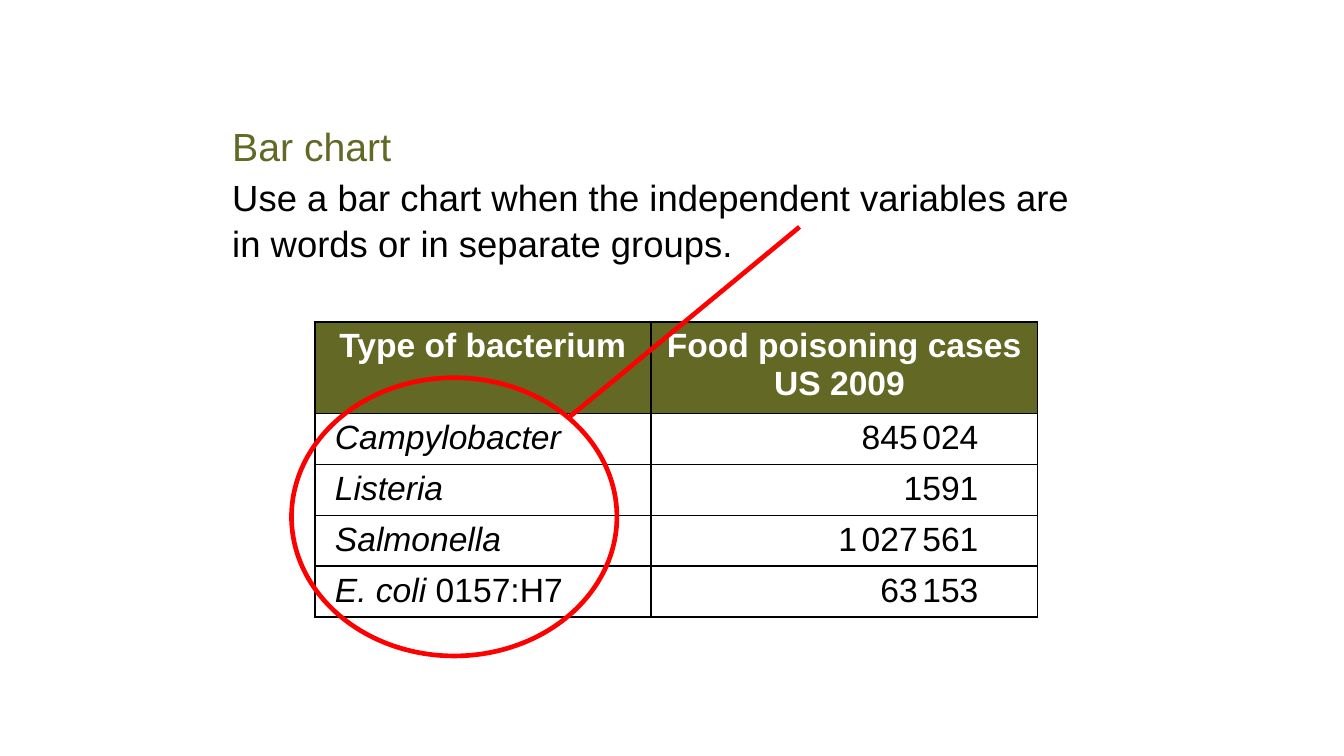
from lxml.etree import SubElement
from pptx import Presentation
from pptx.dml.color import RGBColor
from pptx.enum.shapes import MSO_CONNECTOR, MSO_SHAPE
from pptx.enum.text import PP_ALIGN
from pptx.oxml.ns import qn
from pptx.util import Cm, Pt

OLIVE = RGBColor(0x63, 0x68, 0x25)
BLACK = RGBColor(0x00, 0x00, 0x00)
WHITE = RGBColor(0xFF, 0xFF, 0xFF)
RED = RGBColor(0xFF, 0x00, 0x00)

FONT = "Arial"
TABLE_SIZE = 18
GAP_SIZE = 9  # small space between groups of digits

HEADERS = ["Type of bacterium", "Food poisoning cases\nUS 2009 "]
# Each row: italic name, upright suffix, number of cases
BACTERIA = [
    ("Campylobacter", "", "845 024"),
    ("Listeria", "", "1591"),
    ("Salmonella", "", "1\u00a0027\u00a0561".replace("\u00a0", " ")),
    ("E. coli", " 0157:H7", "63 153"),
]


def add_text(paragraph, text, size=TABLE_SIZE, color=BLACK, bold=False, italic=False):
    """Append text to a paragraph; a newline becomes a line break."""
    for index, line in enumerate(text.split("\n")):
        if index:
            paragraph.add_line_break()
        run = paragraph.add_run()
        run.text = line
        run.font.name = FONT
        run.font.size = Pt(size)
        run.font.color.rgb = color
        run.font.bold = bold
        run.font.italic = italic


def add_number(paragraph, number):
    """Write a number with narrow gaps between its groups of digits."""
    for index, digits in enumerate(number.split()):
        if index:
            add_text(paragraph, "\u00a0", size=GAP_SIZE)
        add_text(paragraph, digits)


def add_explanation(slide):
    box = slide.shapes.add_textbox(Cm(4.14), Cm(2.18), Cm(17.09), Cm(2.84))
    frame = box.text_frame
    frame.word_wrap = True
    heading = frame.paragraphs[0]
    add_text(heading, "Bar chart", size=21, color=OLIVE)
    body = frame.add_paragraph()
    add_text(body, "Use a bar chart when the independent variables are\n"
                   "in words or in separate groups.", size=19.5)
    body.line_spacing = 1.05
    for paragraph in (heading, body):
        paragraph.space_before = Pt(2)


def set_borders(cell):
    properties = cell._tc.get_or_add_tcPr()
    for position, side in enumerate(("a:lnL", "a:lnR", "a:lnT", "a:lnB")):
        line = properties.makeelement(qn(side), {"w": str(Pt(1))})
        fill = SubElement(line, qn("a:solidFill"))
        SubElement(fill, qn("a:srgbClr"), val=str(BLACK))
        properties.insert(position, line)


def format_cell(cell, fill, left=0.18, right=0.18, align=PP_ALIGN.LEFT):
    """Style a cell and return its paragraph."""
    cell.fill.solid()
    cell.fill.fore_color.rgb = fill
    cell.margin_left, cell.margin_right = Cm(left), Cm(right)
    cell.margin_top = cell.margin_bottom = Cm(0.1)
    set_borders(cell)
    paragraph = cell.text_frame.paragraphs[0]
    paragraph.alignment = align
    return paragraph


def add_bacteria_table(slide):
    frame = slide.shapes.add_table(len(BACTERIA) + 1, len(HEADERS),
                                   Cm(5.95), Cm(6.09), Cm(13.66), Cm(5.55))
    table = frame.table
    for column, width in zip(table.columns, (6.35, 7.31)):
        column.width = Cm(width)
    for index, row in enumerate(table.rows):
        row.height = Cm(0.96 if index else 1.71)

    # Header row
    for column, header in enumerate(HEADERS):
        paragraph = format_cell(table.cell(0, column), OLIVE, align=PP_ALIGN.CENTER)
        add_text(paragraph, header, color=WHITE, bold=True)

    # One row per bacterium
    for row, (name, suffix, cases) in enumerate(BACTERIA, start=1):
        paragraph = format_cell(table.cell(row, 0), WHITE, left=0.38)
        add_text(paragraph, name, italic=True)
        if suffix:
            add_text(paragraph, suffix)
        paragraph = format_cell(table.cell(row, 1), WHITE, right=1.12,
                                align=PP_ALIGN.RIGHT)
        add_number(paragraph, cases)


def add_highlight(slide):
    """Ring the words column and lead a line to it from the explanation."""
    group = slide.shapes.add_group_shape()
    leader = group.shapes.add_connector(MSO_CONNECTOR.STRAIGHT,
                                        Cm(15.11), Cm(4.29), Cm(10.74), Cm(7.9))
    SubElement(leader._element.spPr, qn("a:effectLst"))
    ring = group.shapes.add_shape(MSO_SHAPE.OVAL, Cm(5.51), Cm(7.14), Cm(6.15), Cm(5.26))
    ring.shadow.inherit = False
    ring.fill.background()
    for shape in (leader, ring):
        shape.line.color.rgb = RED
        shape.line.width = Pt(2.5)


def main():
    presentation = Presentation()
    presentation.slide_width = Cm(25.4)
    presentation.slide_height = Cm(14.29)
    slide = presentation.slides.add_slide(presentation.slide_layouts[6])
    add_explanation(slide)
    add_bacteria_table(slide)
    add_highlight(slide)
    presentation.save("out.pptx")


if __name__ == "__main__":
    main()
